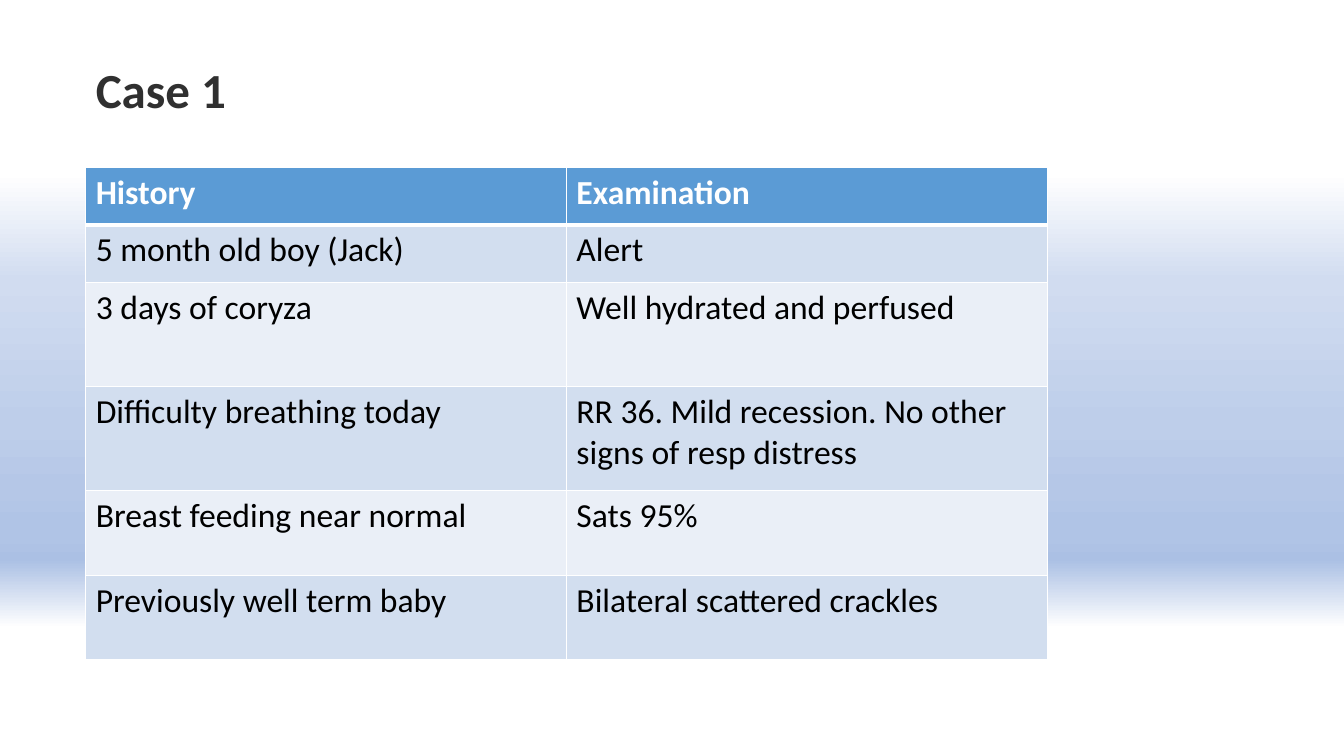
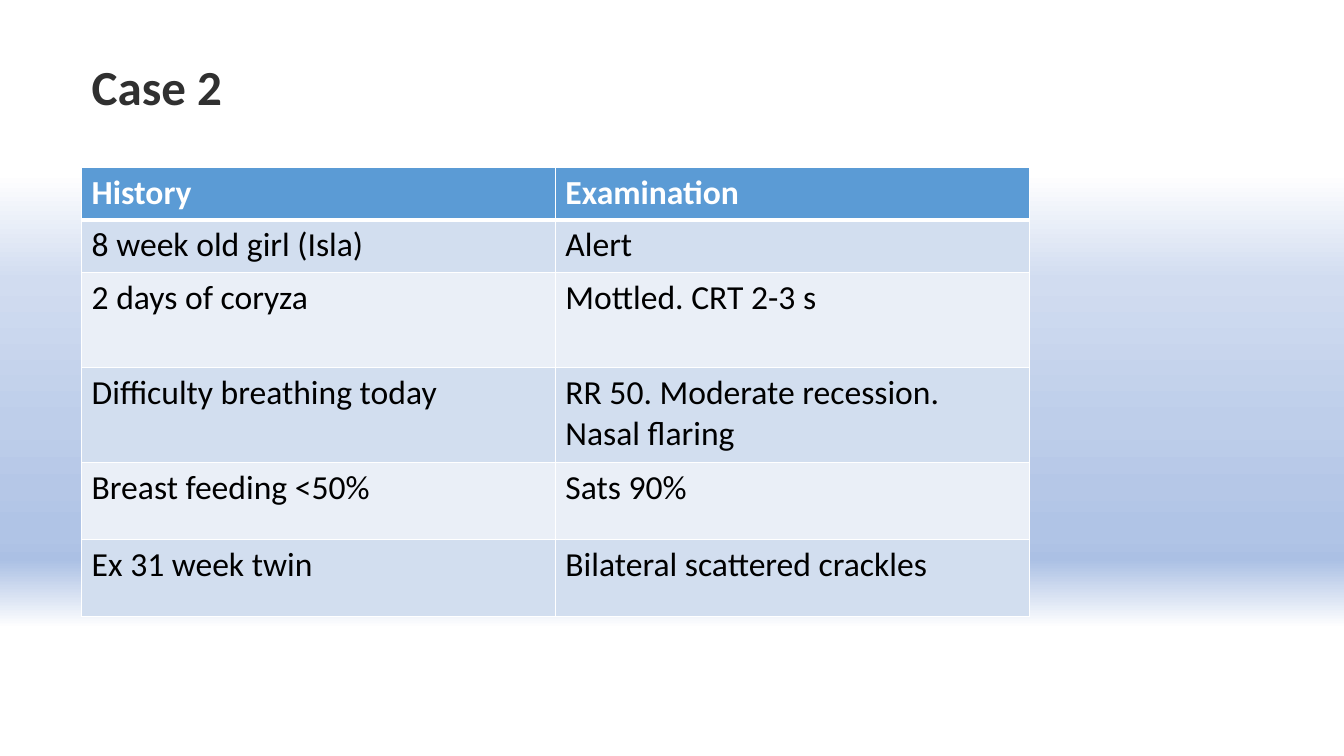
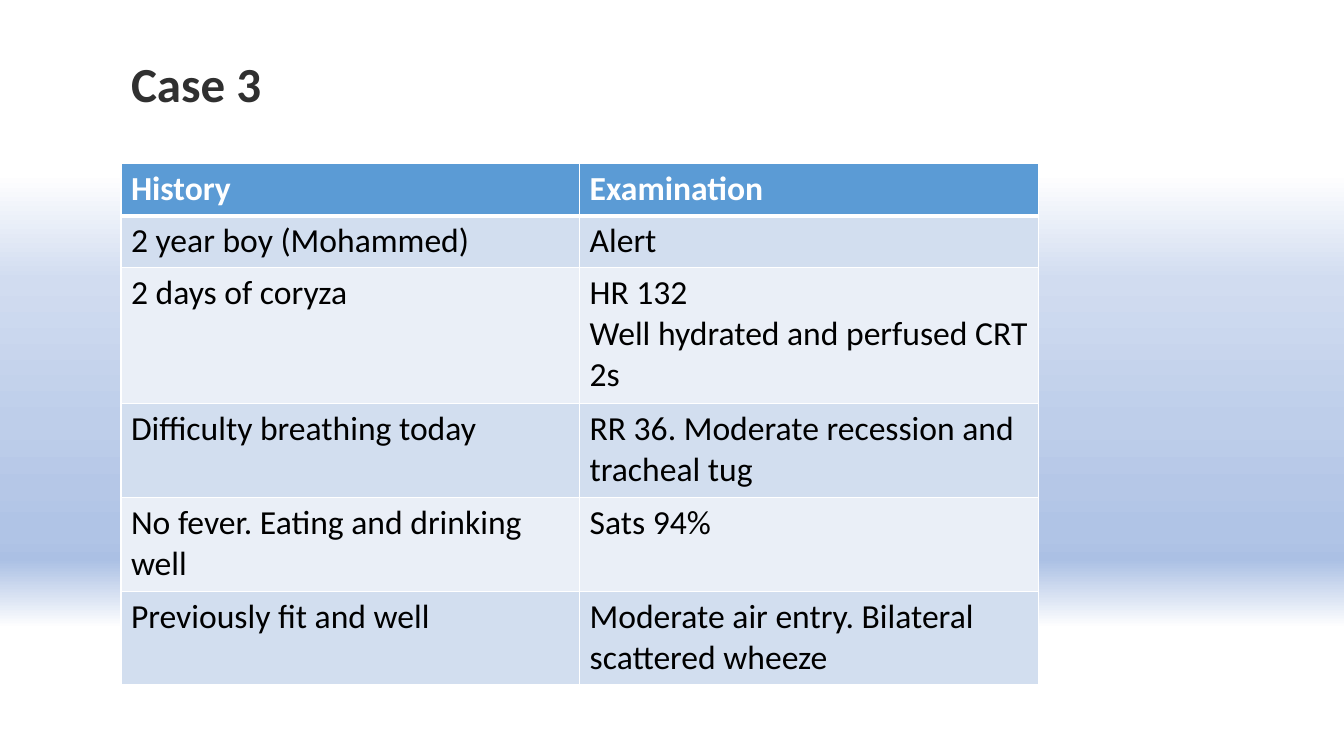
from dataclasses import dataclass

import lxml.etree
import pptx
import pptx.dml.color
import pptx.enum.text
import pptx.oxml.ns
import pptx.presentation
import pptx.slide
import pptx.table
import pptx.text.text
import pptx.util

Pt = pptx.util.Pt
qn = pptx.oxml.ns.qn

FONT = "Calibri"
COLORS = {
    "white": "FFFFFF",
    "black": "000000",
    "title": "303030",
    "header": "5B9BD5",
    "band_dark": "D2DEEF",
    "band_light": "EAEFF7",
}
BACKGROUND_STOPS = [
    (23, "FFFFFF"), (37, "D1DCF0"), (56, "BECEEA"), (65, "B5C7E7"), (69, "B0C4E6"),
    (72, "AEC2E5"), (73, "ADC1E5"), (73, "ABC0E4"), (74, "ABC0E4"), (83, "FFFFFF"),
]
TITLE_ONLY = 5
TITLE_WIDTH, TITLE_HEIGHT = 336, 86.4
THIN, THICK = 1, 3


@dataclass(frozen=True)
class Case:
    title: str
    left: float
    title_top: float
    table_top: float
    column_width: float
    row_heights: list[float]
    findings: list[tuple[str, str]]


CASES = [
    Case("Case 1", 61.2, 23, 119.5, 343.4, [41.2, 41.2, 74.4, 74.4, 60.4, 60.4], [
        ("5 month old boy (Jack)", "Alert"),
        ("3 days of coryza", "Well hydrated and perfused"),
        ("Difficulty breathing today", "RR 36. Mild recession. No other signs of resp distress"),
        ("Breast feeding near normal", "Sats 95%"),
        ("Previously well term baby", "Bilateral scattered crackles"),
    ]),
    Case("Case 2", 58.3, 20.9, 119.5, 338.4, [37.6, 37.6, 67.8, 67.8, 55, 55], [
        ("8 week old girl (Isla)", "Alert"),
        ("2 days of coryza", "Mottled. CRT 2-3 s"),
        ("Difficulty breathing today", "RR 50. Moderate recession. Nasal flaring"),
        ("Breast feeding <50%", "Sats 90%"),
        ("Ex 31 week twin", "Bilateral scattered crackles"),
    ]),
    Case("Case 3", 86.4, 18.7, 116.8, 327.6, [37.3, 37.3, 97, 67, 67, 67], [
        ("2 year boy (Mohammed)", "Alert"),
        ("2 days of coryza", "HR 132\nWell hydrated and perfused CRT 2s"),
        ("Difficulty breathing today", "RR 36. Moderate recession and tracheal tug"),
        ("No fever. Eating and drinking well", "Sats 94%"),
        ("Previously fit and well", "Moderate air entry. Bilateral scattered wheeze"),
    ]),
]


def rgb(name: str) -> pptx.dml.color.RGBColor:
    return pptx.dml.color.RGBColor.from_string(COLORS[name])


def write_text(frame: pptx.text.text.TextFrame, text: str, *, size: float, color: str,
               bold: bool = False, line_spacing: float = 1.0) -> None:
    frame.text = text
    frame.word_wrap = True
    for para in frame.paragraphs:
        para.alignment = pptx.enum.text.PP_ALIGN.LEFT
        para.line_spacing = line_spacing
        for span in para.runs:
            span.font.name = FONT
            span.font.size = Pt(size)
            span.font.bold = bold
            span.font.color.rgb = rgb(color)


def set_background(master: pptx.slide.SlideMaster) -> None:
    fill = master.background.fill
    fill.gradient()
    fill.gradient_angle = 270
    stops = master.element.xpath("./p:cSld/p:bg//a:gsLst")[0]
    for stop in list(stops):
        stops.remove(stop)
    for percent, color in BACKGROUND_STOPS:
        stop = lxml.etree.SubElement(stops, qn("a:gs"), pos=str(percent * 1000))
        lxml.etree.SubElement(stop, qn("a:srgbClr"), val=color)


def set_borders(cell: pptx.table._Cell, *, top: float, bottom: float) -> None:
    properties = cell._tc.get_or_add_tcPr()
    for side, width in (("L", THIN), ("R", THIN), ("T", top), ("B", bottom)):
        line = lxml.etree.SubElement(properties, qn(f"a:ln{side}"), w=str(Pt(width)))
        fill = lxml.etree.SubElement(line, qn("a:solidFill"))
        lxml.etree.SubElement(fill, qn("a:srgbClr"), val=COLORS["white"])


def add_title(page: pptx.slide.Slide, case: Case) -> None:
    box = page.shapes.title
    box.left, box.top = Pt(case.left), Pt(case.title_top)
    box.width, box.height = Pt(TITLE_WIDTH), Pt(TITLE_HEIGHT)
    frame = box.text_frame
    frame.auto_size = pptx.enum.text.MSO_AUTO_SIZE.NONE
    frame.vertical_anchor = pptx.enum.text.MSO_ANCHOR.MIDDLE
    write_text(frame, case.title, size=35, color="title", bold=True, line_spacing=0.9)


def add_findings(page: pptx.slide.Slide, case: Case) -> None:
    rows = [("History", "Examination"), *case.findings]
    table = page.shapes.add_table(
        len(rows), 2, Pt(case.left), Pt(case.table_top),
        Pt(2 * case.column_width), Pt(sum(case.row_heights))).table
    for column in table.columns:
        column.width = Pt(case.column_width)
    for index, (texts, height) in enumerate(zip(rows, case.row_heights)):
        table.rows[index].height = Pt(height)
        is_header = index == 0
        band = "header" if is_header else "band_dark" if index % 2 else "band_light"
        for cell, text in zip(table.rows[index].cells, texts):
            set_borders(cell, top=THICK if index == 1 else THIN,
                        bottom=THICK if is_header else THIN)
            cell.fill.solid()
            cell.fill.fore_color.rgb = rgb(band)
            write_text(cell.text_frame, text, size=24, bold=is_header,
                       color="white" if is_header else "black")


def main() -> None:
    deck = pptx.Presentation()
    deck.slide_width, deck.slide_height = Pt(960), Pt(540)
    set_background(deck.slide_master)
    for case in CASES:
        page = deck.slides.add_slide(deck.slide_layouts[TITLE_ONLY])
        add_title(page, case)
        add_findings(page, case)
    deck.save("out.pptx")


if __name__ == "__main__":
    main()
